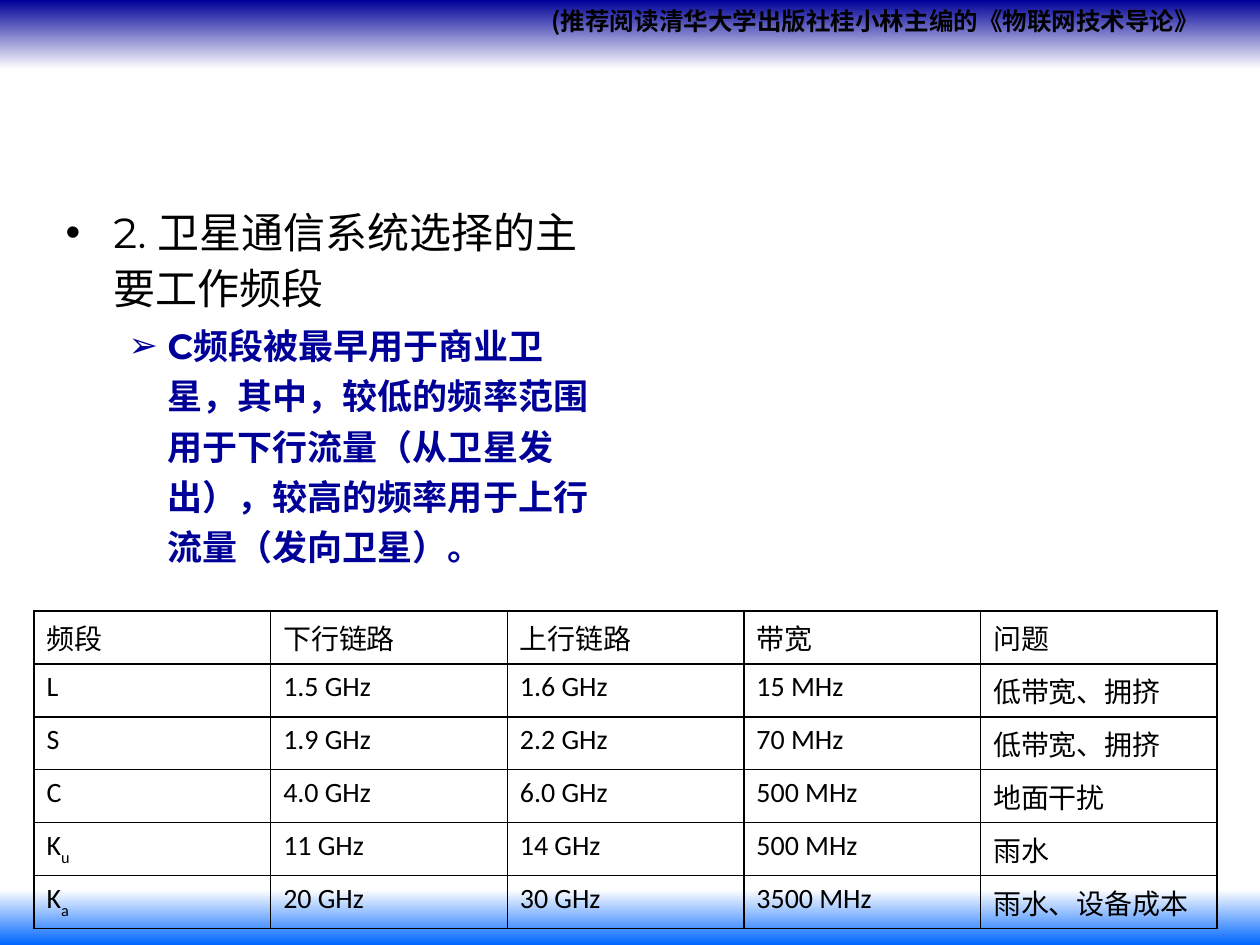
"""Build a slide on the main working bands of satellite communication."""
from dataclasses import dataclass

import pptx
import pptx.dml.color
import pptx.enum.shapes
import pptx.enum.text
import pptx.oxml
import pptx.oxml.ns
import pptx.util


@dataclass(frozen=True)
class Theme:
    """Colours, fonts and type sizes of the slide."""
    black: str = "000000"
    white: str = "FFFFFF"
    navy: str = "000099"
    blue: str = "0066FF"
    asian: str = "Noto Sans CJK SC"
    text: str = "Montserrat"
    grid: str = "Calibri"
    note_size: int = 14
    head_size: int = 24
    point_size: int = 20
    cell_size: int = 16


THEME = Theme()
WIDTH, HEIGHT = 10, 7.5
ROW_HEIGHT = 0.42
BANDS = [
    ["频段", "下行链路", "上行链路", "带宽", "问题"],
    ["L", "1.5 GHz", "1.6 GHz", "15 MHz", "低带宽、拥挤"],
    ["S", "1.9 GHz", "2.2 GHz", "70 MHz", "低带宽、拥挤"],
    ["C", "4.0 GHz", "6.0 GHz", "500 MHz", "地面干扰"],
    [("K", "u"), "11 GHz", "14 GHz", "500 MHz", "雨水"],
    [("K", "a"), "20 GHz", "30 GHz", "3500 MHz", "雨水、设备成本"],
]


def inches(*lengths):
    """Turn numbers into lengths."""
    return [pptx.util.Inches(length) for length in lengths]


def colour(code):
    """Turn a hex code into a colour."""
    return pptx.dml.color.RGBColor.from_string(code)


def add_xml(parent, markup):
    """Append an element of the drawing namespace."""
    space = pptx.oxml.ns.nsdecls("a")
    name, rest = markup[1:].split(" ", 1)
    parent.append(pptx.oxml.parse_xml(f"<{name} {space} {rest}"))


def write(para, text, *, size, font, color=THEME.black, bold=False, lower=False):
    """Add a formatted span of text to a paragraph."""
    span = para.add_run()
    span.text = text
    span.font.size = pptx.util.Pt(size)
    span.font.name = font
    span.font.bold = bold
    span.font.color.rgb = colour(color)
    properties = span.font._element
    add_xml(properties, f'<a:ea typeface="{THEME.asian}"/>')
    if lower:
        properties.set("baseline", "-30000")


def indent(para, left, hang, bullet=None):
    """Give a paragraph a hanging indent and perhaps a bullet."""
    properties = para._p.get_or_add_pPr()
    properties.set("marL", str(pptx.util.Inches(left)))
    properties.set("indent", str(-pptx.util.Inches(hang)))
    properties.set("hangingPunct", "0")
    if bullet:
        add_xml(properties, '<a:buFont typeface="Arial"/>')
        add_xml(properties, f'<a:buChar char="{bullet}"/>')


def add_band(page, top, height, upper, lower):
    """Add a full-width strip that fades downwards."""
    band = page.shapes.add_shape(
        pptx.enum.shapes.MSO_SHAPE.RECTANGLE, *inches(0, top, WIDTH, height))
    band.shadow.inherit = False
    band.line.fill.background()
    band.fill.gradient()
    band.fill.gradient_angle = 270
    for stop, code in zip(band.fill.gradient_stops, (upper, lower)):
        stop.color.rgb = colour(code)


def add_note(page, text):
    """Add the reading tip at the top right."""
    left = 0.39 * WIDTH
    box = page.shapes.add_textbox(*inches(left, 0, WIDTH - left, 0.33))
    frame = box.text_frame
    frame.word_wrap = True
    frame.auto_size = pptx.enum.text.MSO_AUTO_SIZE.SHAPE_TO_FIT_TEXT
    para = frame.paragraphs[0]
    para.alignment = pptx.enum.text.PP_ALIGN.CENTER
    write(para, text, size=THEME.note_size, font=THEME.asian, bold=True)


def fill_body(body, heading, point):
    """Place the body and write a heading with one point below it."""
    body.left, body.top, body.width, body.height = inches(0.42, 1.55, 4.54, 5.45)
    frame = body.text_frame
    frame.auto_size = pptx.enum.text.MSO_AUTO_SIZE.NONE
    para = frame.paragraphs[0]
    indent(para, 0.38, 0.38, "•")
    para.line_spacing = 1.1
    para.space_before = pptx.util.Pt(0)
    write(para, heading, size=THEME.head_size, font=THEME.text)
    para = frame.add_paragraph()
    para.level = 1
    indent(para, 0.81, 0.31, "➢")
    para.line_spacing = 1.2
    para.space_before = para.space_after = pptx.util.Pt(THEME.point_size / 10)
    write(para, point, size=THEME.point_size, font=THEME.text,
          color=THEME.navy, bold=True)


def fill_cell(cell, content):
    """Write a cell, with a subscript if it is a pair, and rule its edges."""
    base, *subscripts = [content] if isinstance(content, str) else content
    para = cell.text_frame.paragraphs[0]
    indent(para, 0.38, 0.38)
    write(para, base, size=THEME.cell_size, font=THEME.grid)
    for subscript in subscripts:
        write(para, subscript, size=THEME.cell_size, font=THEME.grid, lower=True)
    properties = cell._tc.get_or_add_tcPr()
    for edge in "LRTB":
        add_xml(properties, f'<a:ln{edge} w="{pptx.util.Pt(1)}"><a:solidFill>'
                f'<a:srgbClr val="{THEME.black}"/></a:solidFill></a:ln{edge}>')
    cell.fill.background()


def add_grid(page, rows):
    """Add the table of bands with equal columns and rows."""
    table = page.shapes.add_table(
        len(rows), len(rows[0]),
        *inches(0.27, 4.85, 9.39, ROW_HEIGHT * len(rows))).table
    table.first_row = table.horz_banding = False
    for row, contents in zip(table.rows, rows):
        for cell, content in zip(row.cells, contents):
            fill_cell(cell, content)


def main():
    """Build and save the deck."""
    deck = pptx.Presentation()
    deck.slide_width, deck.slide_height = inches(WIDTH, HEIGHT)
    page = deck.slides.add_slide(deck.slide_layouts.get_by_name("Title and Content"))
    title, body = page.placeholders
    title._element.getparent().remove(title._element)
    add_band(page, 0, 0.55, THEME.navy, THEME.white)
    add_band(page, HEIGHT - 0.44, 0.44, THEME.white, THEME.blue)
    add_note(page, "(推荐阅读清华大学出版社桂小林主编的《物联网技术导论》")
    fill_body(body, "2. 卫星通信系统选择的主要工作频段",
              "C频段被最早用于商业卫星，其中，较低的频率范围用于下行流量"
              "（从卫星发出），较高的频率用于上行流量（发向卫星）。")
    add_grid(page, BANDS)
    deck.save("out.pptx")


if __name__ == "__main__":
    main()
